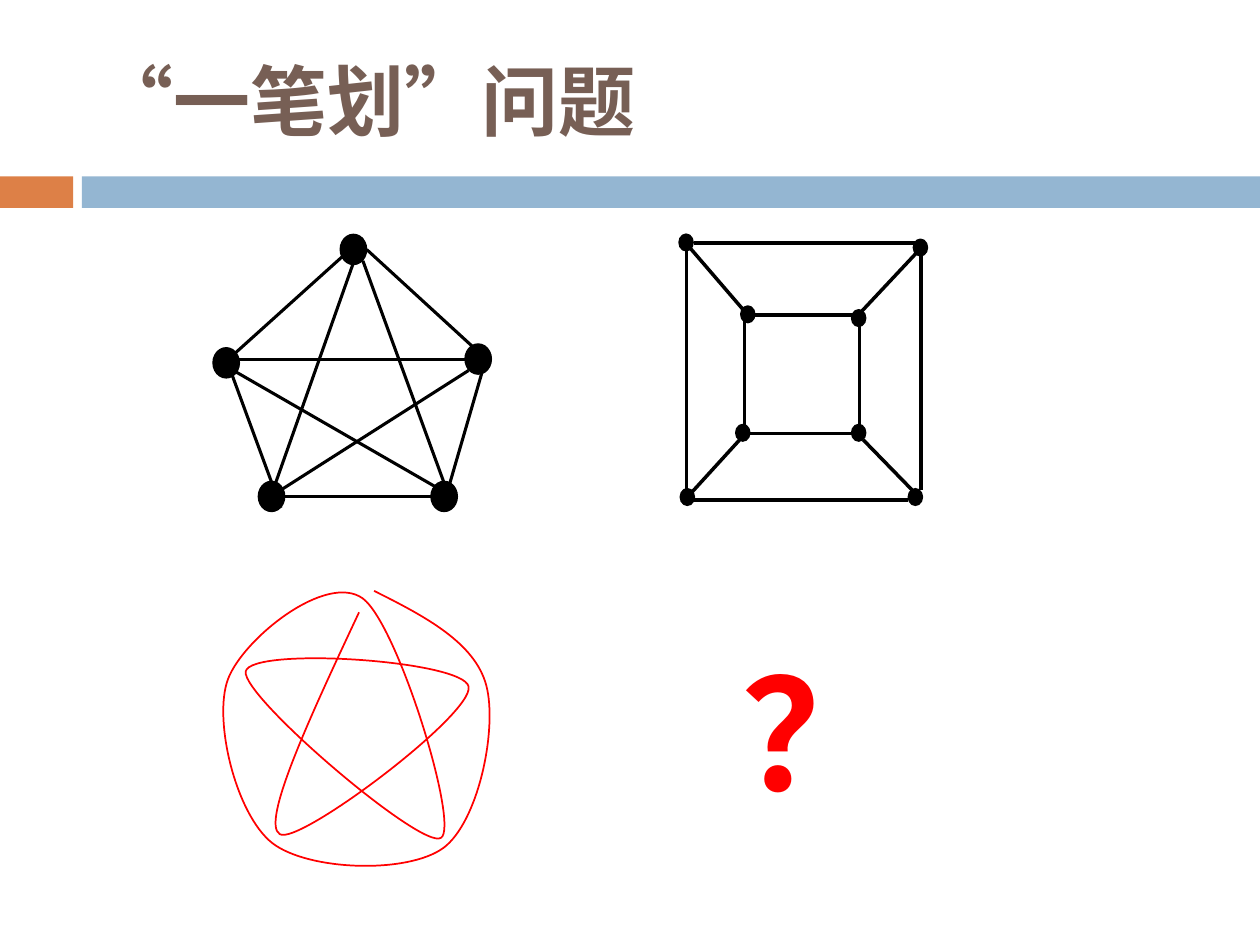
"""Build the slide about drawing figures in one stroke."""
from lxml.etree import SubElement
from pptx import Presentation
from pptx.dml.color import RGBColor
from pptx.enum.shapes import MSO_CONNECTOR, MSO_SHAPE
from pptx.enum.text import MSO_ANCHOR
from pptx.oxml.ns import qn
from pptx.util import Cm, Pt


def place(*nums):
    """Turn inches into lengths."""
    return [Cm(num * 2.54) for num in nums]


def paint(fill, hue):
    """Fill with a solid colour."""
    fill.solid()
    fill.fore_color.rgb = RGBColor.from_string(hue)


deck = Presentation()
deck.slide_width, deck.slide_height = Cm(25.4), Cm(19.05)
slide = deck.slides.add_slide(deck.slide_layouts[6])
shapes = slide.shapes

for left, width, hue in [(0, 0.58, "DD8047"), (0.65, 9.35, "94B6D2")]:
    bar = shapes.add_shape(MSO_SHAPE.RECTANGLE, *place(left, 1.4, width, 0.25))
    bar.shadow.inherit = False
    paint(bar.fill, hue)
    bar.line.fill.background()

curve = [
    (2.85, 4.86),
    (2.46, 5.69), (2.07, 6.53), (2.22, 6.62),
    (2.36, 6.72), (3.76, 5.67), (3.72, 5.45),
    (3.68, 5.24), (1.99, 5.13), (1.95, 5.33),
    (1.92, 5.53), (3.35, 6.75), (3.5, 6.65),
    (3.65, 6.56), (3.16, 4.96), (2.88, 4.75),
    (2.59, 4.54), (1.93, 5.07), (1.81, 5.39),
    (1.69, 5.71), (1.87, 6.46), (2.16, 6.69),
    (2.44, 6.91), (3.23, 6.94), (3.52, 6.73),
    (3.8, 6.52), (3.95, 5.78), (3.86, 5.44),
    (3.77, 5.1), (3.37, 4.89), (2.97, 4.69),
]
pen = shapes.build_freeform(*place(*curve[0]))
pen.add_line_segments([place(*spot) for spot in curve[1:]], close=False)
stroke = pen.convert_to_shape()
stroke.shadow.inherit = False
stroke.fill.background()
paint(stroke.line.fill, "FF0000")
stroke.line.width = Pt(1)
track = next(stroke.element.iter(qn("a:path")))
steps = track.findall(qn("a:lnTo"))
for start in range(0, len(steps), 3):
    bend = SubElement(track, qn("a:cubicBezTo"))
    for step in steps[start:start + 3]:
        bend.append(step[0])
        track.remove(step)

star = {
    "kind": MSO_SHAPE.FLOWCHART_CONNECTOR, "size": (0.21, 0.24),
    "rim": 0.75, "weight": 1.75,
    "dots": [(3.69, 2.73), (2.7, 1.86), (1.69, 2.76), (2.05, 3.82), (3.42, 3.82)],
    "edges": [
        (2.15, 3.94, 3.72, 2.94), (2.26, 3.94, 3.42, 3.94),
        (1.87, 2.8, 2.88, 1.89), (2.91, 1.98, 3.75, 2.75),
        (3.54, 3.94, 3.83, 2.94), (1.84, 2.97, 2.23, 4.03),
        (1.88, 2.85, 3.9, 2.85), (2.15, 3.94, 2.8, 2.1),
        (2.88, 2.07, 3.52, 3.82), (1.87, 2.95, 3.45, 3.86),
    ],
}
cube = {
    "kind": MSO_SHAPE.OVAL, "size": (0.11, 0.13), "rim": 1, "weight": 2,
    "dots": [
        (5.39, 1.86), (5.4, 3.88), (7.21, 3.88), (7.25, 1.9),
        (5.88, 2.43), (6.76, 2.46), (5.84, 3.37), (6.76, 3.37),
    ],
    "edges": [
        (5.51, 1.93, 7.29, 1.93), (5.49, 3.97, 7.21, 3.97),
        (5.45, 1.98, 5.45, 3.91), (7.31, 2.01, 7.31, 3.89),
        (5.99, 2.5, 6.77, 2.5), (5.95, 3.44, 6.76, 3.44),
        (5.91, 2.54, 5.91, 3.38), (6.82, 2.56, 6.82, 3.4),
        (5.47, 1.96, 5.9, 2.46), (5.88, 3.48, 5.47, 3.93),
        (6.84, 2.47, 7.29, 1.99), (6.85, 3.49, 7.24, 3.89),
    ],
}
for graph in (star, cube):
    group = shapes.add_group_shape().shapes
    for spot in graph["dots"]:
        dot = group.add_shape(graph["kind"], *place(*spot, *graph["size"]))
        dot.shadow.inherit = False
        paint(dot.fill, "000000")
        paint(dot.line.fill, "000000")
        dot.line.width = Pt(graph["rim"])
    for ends in graph["edges"]:
        edge = group.add_connector(MSO_CONNECTOR.STRAIGHT, *place(*ends))
        paint(edge.line.fill, "000000")
        edge.line.width = Pt(graph["weight"])
        SubElement(edge.element.spPr, qn("a:effectLst"))

texts = [
    ("“一笔划”问题", (0.67, 0.25, 8.92, 1.08), 44, "Arial", "775F55", MSO_ANCHOR.MIDDLE),
    ("？", (5.79, 5.01, 1.58, 1.57), 88, "Times New Roman", "FF0000", MSO_ANCHOR.TOP),
]
for words, area, size, face, hue, anchor in texts:
    frame = shapes.add_textbox(*place(*area)).text_frame
    frame.word_wrap = True
    frame.vertical_anchor = anchor
    line = frame.paragraphs[0]
    line.text = words
    line.font.size = Pt(size)
    line.font.name = face
    line.font.bold = True
    paint(line.font.fill, hue)

deck.save("out.pptx")
